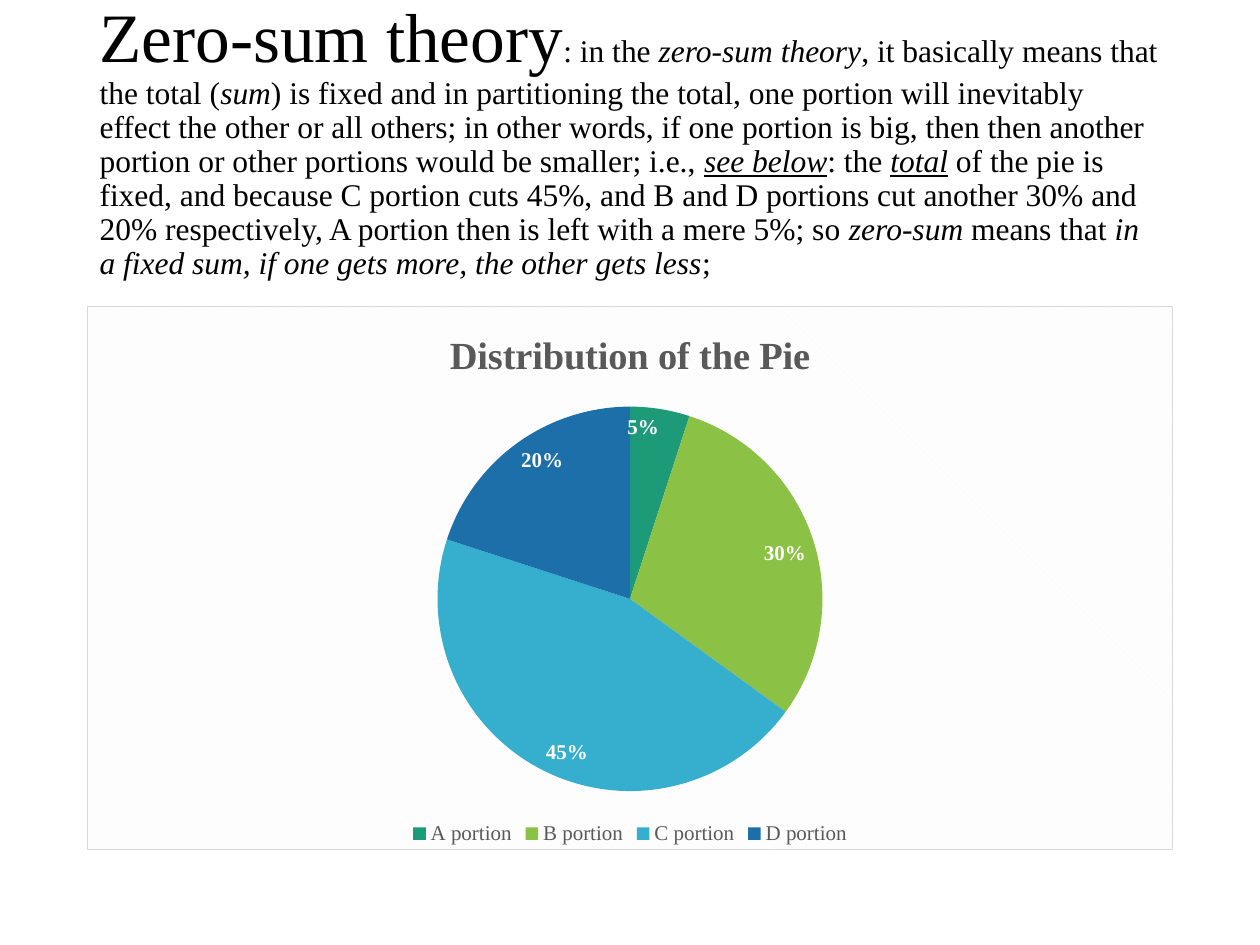
from dataclasses import dataclass

from pptx import Presentation
from pptx.chart.data import CategoryChartData
from pptx.dml.color import RGBColor
from pptx.enum.chart import XL_CHART_TYPE, XL_LABEL_POSITION, XL_LEGEND_POSITION
from pptx.enum.text import MSO_ANCHOR, MSO_AUTO_SIZE, PP_ALIGN
from pptx.oxml import parse_xml
from pptx.oxml.ns import nsdecls, qn
from pptx.util import Inches, Pt

PIE = XL_CHART_TYPE.PIE
INSIDE_END = XL_LABEL_POSITION.INSIDE_END
BOTTOM = XL_LEGEND_POSITION.BOTTOM
MIDDLE = MSO_ANCHOR.MIDDLE
NO_AUTOFIT = MSO_AUTO_SIZE.NONE
LEFT = PP_ALIGN.LEFT


@dataclass(frozen=True)
class Theme:
    """Colours, font and type sizes of the slide."""
    font: str = "Times New Roman"
    ink: str = "000000"
    muted: str = "595959"
    light: str = "FFFFFF"
    hatch: str = "F2F2F2"
    border: str = "D9D9D9"
    term_size: float = 39.6
    body_size: float = 18
    chart_title_size: float = 22
    label_size: float = 12


THEME = Theme()
TERM = "Zero-sum theory"
DEFINITION = [
    (": in the ", ""),
    ("zero-sum theory", "i"),
    (", it basically means that the total (", ""),
    ("sum", "i"),
    (") is fixed and in partitioning the total, one portion will inevitably effect the other "
     "or all others; in other words, if one portion is big, then then another portion or other "
     "portions would be smaller; i.e., ", ""),
    ("see below", "iu"),
    (": the ", ""),
    ("total", "iu"),
    (" of the pie is fixed, and because C portion cuts 45%, and B and D portions cut another "
     "30% and 20% respectively, A portion then is left with a mere 5%; so ", ""),
    ("zero-sum ", "i"),
    ("means that ", ""),
    ("in a fixed sum, if one gets more, the other gets less", "i"),
    (";", ""),
]
CHART_TITLE = "Distribution of the Pie"
PORTIONS = [
    ("A portion", 5, "1D9A78"),
    ("B portion", 30, "8BC145"),
    ("C portion", 45, "36AFCE"),
    ("D portion", 20, "1D6FA9"),
]
WIDTH, HEIGHT = Inches(10), Inches(7.5)
MARGIN = Inches(0.69)
CONTENT_WIDTH = WIDTH - 2 * MARGIN
TITLE_TOP, TITLE_HEIGHT = Inches(0.4), Inches(1.45)
CHART_TOP, CHART_HEIGHT = Inches(2.43), Inches(4.32)


def style(font, size, color, bold=False):
    """Give a font the theme typeface with a size, colour and weight."""
    font.name = THEME.font
    font.size = Pt(size)
    font.color.rgb = RGBColor.from_string(color)
    font.bold = bold


def write_definition(title):
    """Place the title and write the term with its definition."""
    title.left, title.top = MARGIN, TITLE_TOP
    title.width, title.height = CONTENT_WIDTH, TITLE_HEIGHT
    frame = title.text_frame
    frame.word_wrap = True
    frame.auto_size = NO_AUTOFIT
    frame.vertical_anchor = MIDDLE
    paragraph = frame.paragraphs[0]
    paragraph.alignment = LEFT
    paragraph.line_spacing = 0.9
    style(paragraph.font, THEME.body_size, THEME.ink)
    term = paragraph.add_run()
    term.text = TERM
    term.font.size = Pt(THEME.term_size)
    for text, marks in DEFINITION:
        phrase = paragraph.add_run()
        phrase.text = text
        phrase.font.italic = "i" in marks
        phrase.font.underline = "u" in marks
    for run in paragraph.runs:
        run.font.name = THEME.font


def frame_chart(chart):
    """Give the chart area its hatched fill and thin border."""
    area = parse_xml(
        f'<c:spPr {nsdecls("c", "a")}><a:pattFill prst="dkDnDiag">'
        f'<a:fgClr><a:srgbClr val="{THEME.hatch}"/></a:fgClr>'
        f'<a:bgClr><a:srgbClr val="{THEME.light}"/></a:bgClr></a:pattFill>'
        f'<a:ln w="{Pt(0.75)}"><a:solidFill><a:srgbClr val="{THEME.border}"/>'
        '</a:solidFill></a:ln></c:spPr>')
    chart.element.find(qn("c:chart")).addnext(area)


def add_pie(slide):
    """Add the pie chart of the portions."""
    names, shares, colors = zip(*PORTIONS)
    data = CategoryChartData()
    data.categories = names
    data.add_series("Series 1", shares)
    chart = slide.shapes.add_chart(
        PIE, MARGIN, CHART_TOP, CONTENT_WIDTH, CHART_HEIGHT, data).chart
    style(chart.font, 10, THEME.ink)
    frame_chart(chart)

    heading = chart.chart_title.text_frame
    heading.text = CHART_TITLE
    style(heading.paragraphs[0].font, THEME.chart_title_size, THEME.muted, bold=True)
    chart.chart_title.include_in_layout = False

    chart.has_legend = True
    chart.legend.position = BOTTOM
    chart.legend.include_in_layout = False
    style(chart.legend.font, THEME.label_size, THEME.muted)

    plot = chart.plots[0]
    plot.vary_by_categories = True
    series = plot.series[0]
    for index, color in enumerate(colors):
        fill = series.points[index].format.fill
        fill.solid()
        fill.fore_color.rgb = RGBColor.from_string(color)

    labels = series.data_labels
    labels.show_percentage = True
    labels.show_value = False
    labels.number_format = "0%"
    labels.number_format_is_linked = False
    labels.position = INSIDE_END
    style(labels.font, THEME.label_size, THEME.light, bold=True)


def main():
    """Build and save the slide."""
    deck = Presentation()
    deck.slide_width, deck.slide_height = WIDTH, HEIGHT
    slide = deck.slides.add_slide(deck.slide_layouts.get_by_name("Title Only"))
    write_definition(slide.shapes.title)
    add_pie(slide)
    deck.save("out.pptx")


if __name__ == "__main__":
    main()
